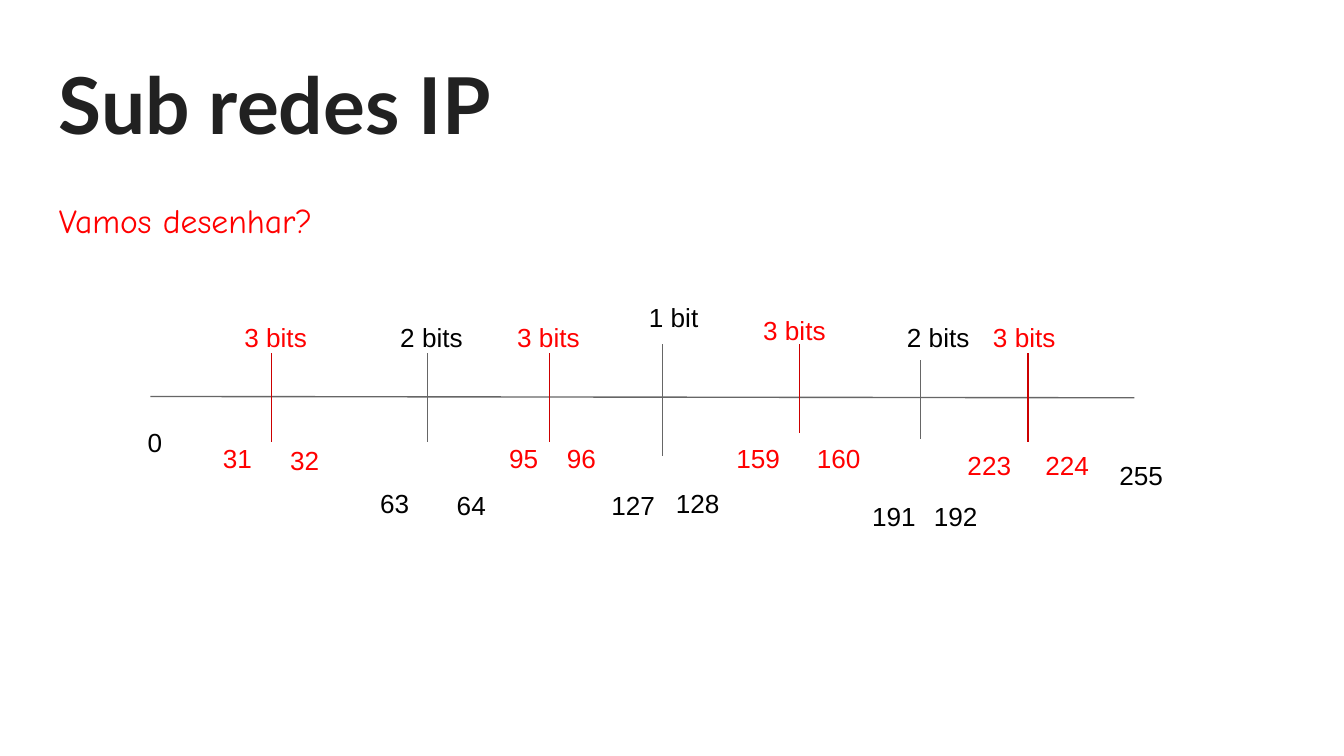
import pptx
import pptx.dml.color
import pptx.enum.shapes
import pptx.enum.text
import pptx.oxml
import pptx.util

theme = {
    "title": {"font": "Lato", "size": 42, "color": "212121", "bold": True},
    "prompt": {"font": "Comic Neue", "size": 18, "color": "FF0000"},
    "label": {"font": "Arial", "size": 14, "color": "000000"},
    "label_3_bits": {"font": "Arial", "size": 14, "color": "FF0000"},
    "axis": "666666",
    "tick_3_bits": "CC0000",
    "line_width": 0.75,
}

deck = pptx.Presentation()
deck.slide_width = pptx.util.Inches(10)
deck.slide_height = pptx.util.Inches(5.625)
slide = deck.slides.add_slide(deck.slide_layouts[6])

# Grid: 100 columns by 56.25 rows
column = deck.slide_width / 100
row = deck.slide_height / 56.25


def write(text, left, top, width, height, font, size, color, bold=False,
          align=pptx.enum.text.PP_ALIGN.LEFT, line_spacing=1.0, space_after=0):
    box = slide.shapes.add_textbox(int(left * column), int(top * row),
                                   int(width * column), int(height * row))
    frame = box.text_frame
    frame.word_wrap = True
    frame.margin_left = frame.margin_right = pptx.util.Inches(0.1)
    frame.margin_top = frame.margin_bottom = pptx.util.Inches(0.1)
    paragraph = frame.paragraphs[0]
    paragraph.alignment = align
    paragraph.line_spacing = line_spacing
    paragraph.space_after = pptx.util.Pt(space_after)
    run = paragraph.add_run()
    run.text = text
    run.font.name = font
    run.font.size = pptx.util.Pt(size)
    run.font.bold = bold
    run.font.color.rgb = pptx.dml.color.RGBColor.from_string(color)


def draw_line(x1, y1, x2, y2, color):
    line = slide.shapes.add_connector(
        pptx.enum.shapes.MSO_CONNECTOR.STRAIGHT,
        int(x1 * column), int(y1 * row), int(x2 * column), int(y2 * row))
    line.line.color.rgb = pptx.dml.color.RGBColor.from_string(color)
    line.line.width = pptx.util.Pt(theme["line_width"])
    properties = line._element.spPr
    properties.append(properties.makeelement(pptx.oxml.ns.qn("a:effectLst"), {}))


# Title and prompt
write("Sub redes IP", 3.4, 3.2, 93.2, 8.8, **theme["title"])
write("Vamos desenhar?", 3.4, 13.4, 89.9, 39.6, **theme["prompt"],
      align=pptx.enum.text.PP_ALIGN.JUSTIFY, line_spacing=1.15, space_after=16)

# Address line with its two ends
draw_line(11.2, 29.5, 84.4, 29.6, theme["axis"])
write("0", 10, 30.7, 3.8, 6.6, **theme["label"])
write("255", 82.3, 33.2, 6.4, 6.6, **theme["label"])

# Splits, one every 32 addresses:
# tick (x, top, bottom), bits label, last address before, first address after
splits = [
    ((20.2, 26.3, 32.9), (17.2, 22.9), (15.6, 31.9), (20.6, 32.1)),
    ((31.8, 26.3, 32.9), (28.8, 22.9), (27.3, 35.3), (33.0, 35.4)),
    ((40.9, 26.3, 32.9), (37.5, 22.9), (36.9, 31.9), (41.2, 31.9)),
    ((49.3, 25.6, 33.9), (47.3, 21.4), (44.5, 35.4), (49.3, 35.3)),
    ((59.5, 25.6, 32.2), (55.8, 22.4), (53.8, 31.9), (59.8, 31.9)),
    ((68.5, 26.8, 32.7), (66.5, 22.9), (63.9, 36.2), (68.5, 36.2)),
    ((76.5, 26.3, 32.9), (72.9, 22.9), (71.0, 32.4), (76.8, 32.4)),
]
for number, (tick, bits_at, last_at, first_at) in enumerate(splits, start=1):
    bits = 3 if number % 2 else 2 if number % 4 else 1
    is_deepest = bits == 3
    style = theme["label_3_bits" if is_deepest else "label"]
    x, tick_top, tick_bottom = tick
    draw_line(x, tick_top, x, tick_bottom,
              theme["tick_3_bits" if is_deepest else "axis"])

    bits_text = f"{bits} bits" if bits > 1 else "1 bit"
    write(bits_text, *bits_at, 7.3 if bits > 1 else 6,
          4.9 if is_deepest else 6.6, **style)

    first = 32 * number
    for address, spot in ((first - 1, last_at), (first, first_at)):
        write(str(address), *spot, 4.5 if address < 100 else 5.5,
              4.2 if is_deepest else 6.6, **style)

deck.save("out.pptx")
